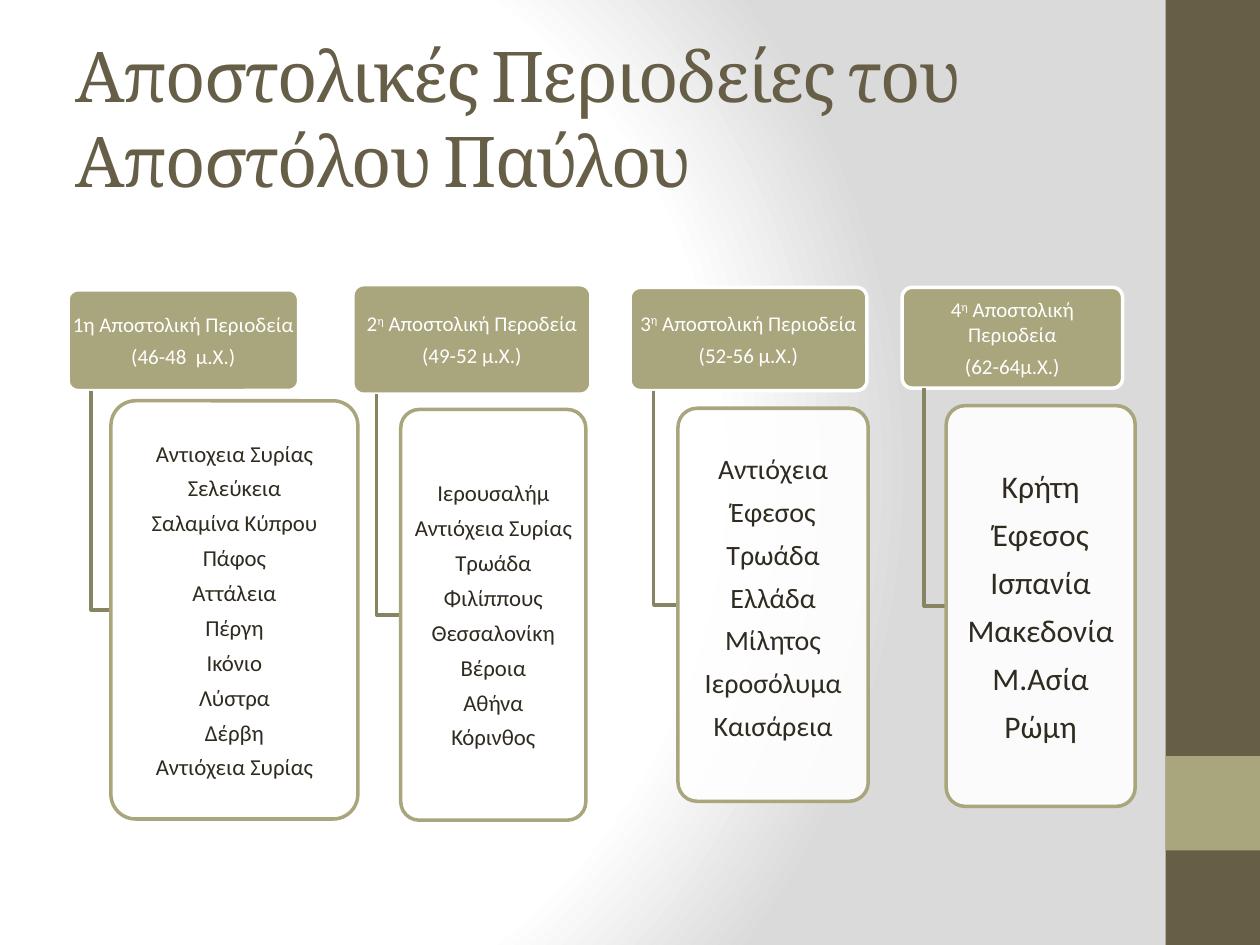
import pptx
import pptx.util
import pptx.dml.color
import pptx.enum.shapes
import pptx.enum.text
import pptx.oxml
from dataclasses import dataclass

Pt = pptx.util.Pt
NS = 'xmlns:a="http://schemas.openxmlformats.org/drawingml/2006/main"'


@dataclass(frozen=True)
class Theme:
    dark: str = "675E47"
    sage: str = "A9A57C"
    rule: str = "878463"
    ink: str = "2F2B20"
    white: str = "FFFFFF"
    shade: str = "DADADA"
    serif: str = "Cambria"
    sans: str = "Calibri"
    title: float = 40
    lead: float = 48.6
    head: float = 12
    gap: float = 0.33
    line: float = 2


def tint(name):
    return pptx.dml.color.RGBColor.from_string(name)


class Deck:
    def __init__(self, theme):
        self.theme = theme
        self.file = pptx.Presentation()
        self.file.slide_width, self.file.slide_height = Pt(720), Pt(540)
        self.slide = self.file.slides.add_slide(self.file.slide_layouts[5])

    def ground(self):
        t = self.theme
        self.slide.background.fill.gradient()
        old = self.slide.element.xpath(".//a:gradFill")[0]
        stops = "".join(
            f'<a:gs pos="{pos}"><a:srgbClr val="{tone}"/></a:gs>'
            for pos, tone in ((0, t.white), (75000, t.white), (100000, t.shade)))
        new = pptx.oxml.parse_xml(
            f'<a:gradFill {NS} rotWithShape="1"><a:gsLst>{stops}</a:gsLst>'
            '<a:path path="circle"><a:fillToRect l="20000" t="50000" '
            'r="100000" b="50000"/></a:path></a:gradFill>')
        old.getparent().replace(old, new)

    def say(self, para, text, font, size, tone, base=0):
        run = para.add_run()
        run.text = text
        run.font.name, run.font.size = font, Pt(size)
        run.font.color.rgb = tint(tone)
        if base:
            run.font._element.set("baseline", str(base * 1000))
        return run

    def title(self, text):
        t = self.theme
        box = self.slide.shapes.title
        box.left, box.top, box.width, box.height = Pt(36), Pt(21.6), Pt(600), Pt(90)
        frame = box.text_frame
        frame.auto_size = pptx.enum.text.MSO_AUTO_SIZE.NONE
        frame.vertical_anchor = pptx.enum.text.MSO_ANCHOR.MIDDLE
        para = frame.paragraphs[0]
        para.alignment = pptx.enum.text.PP_ALIGN.LEFT
        para.line_spacing = Pt(t.lead)
        run = self.say(para, text, t.serif, t.title, t.dark)
        run.font._element.set("spc", "-100")

    def box(self, area, fill, line=None, kind="RECTANGLE"):
        form = getattr(pptx.enum.shapes.MSO_SHAPE, kind)
        shape = self.slide.shapes.add_shape(form, *map(Pt, area))
        shape.shadow.inherit = False
        shape.fill.solid()
        shape.fill.fore_color.rgb = tint(fill)
        if line:
            shape.line.color.rgb = tint(line)
            shape.line.width = Pt(self.theme.line)
        else:
            shape.line.fill.background()
        return shape

    def card(self, area, fill, line, rows, size, tone, lift=0):
        shape = self.box(area, fill, line, "ROUNDED_RECTANGLE")
        shape.adjustments[0] = 0.1
        frame = shape.text_frame
        frame.word_wrap = True
        frame.vertical_anchor = pptx.enum.text.MSO_ANCHOR.MIDDLE
        frame.margin_left = frame.margin_right = frame.margin_top = 0
        frame.margin_bottom = Pt(lift)
        for i, row in enumerate(rows):
            para = frame.add_paragraph() if i else frame.paragraphs[0]
            para.alignment = pptx.enum.text.PP_ALIGN.CENTER
            para.space_after = Pt(round(size * self.theme.gap, 1))
            for text, base in row:
                self.say(para, text, self.theme.sans, size, tone, base)
        return shape

    def elbow(self, head, body):
        x, y = Pt(head[0] + head[2] / 10), Pt(head[1] + head[3])
        end, mid = Pt(body[0]), Pt(body[1] + body[3] / 2)
        pen = self.slide.shapes.build_freeform(x, y)
        pen.add_line_segments([(x, mid), (end, mid)], close=False)
        shape = pen.convert_to_shape()
        shape.shadow.inherit = False
        shape.fill.background()
        shape.line.color.rgb = tint(self.theme.rule)
        shape.line.width = Pt(self.theme.line)

    def trip(self, head, body, name, years, stops, size, lift=0):
        t = self.theme
        self.card(head, t.sage, t.white, [name, [(years, 0)]], t.head, t.white)
        self.elbow(head, body)
        rows = [[(stop, 0)] for stop in stops]
        shape = self.card(body, t.white, t.sage, rows, size, t.ink, lift)
        tone = shape.element.xpath("./p:spPr/a:solidFill/a:srgbClr")[0]
        tone.append(pptx.oxml.parse_xml(f'<a:alpha {NS} val="90000"/>'))


TRIPS = [
    ((38.9, 165.6, 131.8, 57.6), (63.4, 229, 141.1, 239),
     [("1η Αποστολική Περιοδεία", 0)], "(46-48  μ.Χ.)",
     ["Αντιοχεια Συρίας", "Σελεύκεια", "Σαλαμίνα Κύπρου", "Πάφος", "Αττάλεια",
      "Πέργη", "Ικόνιο", "Λύστρα", "Δέρβη", "Αντιόχεια Συρίας"], 13),
    ((201.6, 162.7, 136.1, 62.6), (229, 234, 105.8, 234.7),
     [("2", 0), ("η", 30), (" Αποστολική Περοδεία", 0)], "(49-52 μ.Χ.)",
     ["Ιερουσαλήμ", "Αντιόχεια Συρίας", "Τρωάδα", "Φιλίππους",
      "Θεσσαλονίκη", "Βέροια", "Αθήνα", "Κόρινθος"], 13),
    ((360, 164.2, 135.4, 59), (387.4, 233.3, 108.7, 224.6),
     [("3", 0), ("η", 30), (" Αποστολική Περιοδεία", 0)], "(52-56 μ.Χ.)",
     ["Αντιόχεια", "Έφεσος", "Τρωάδα", "Ελλάδα", "Μίλητος",
      "Ιεροσόλυμα", "Καισάρεια"], 16, 9),
    ((515.5, 164.2, 126, 57.6), (540.7, 231.8, 108, 229),
     [("4", 0), ("η", 30), (" Αποστολική Περιοδεία", 0)], "(62-64μ.Χ.)",
     ["Κρήτη", "Έφεσος", "Ισπανία", "Μακεδονία", "Μ.Ασία", "Ρώμη"], 18),
]


def main():
    theme = Theme()
    deck = Deck(theme)
    deck.ground()
    deck.box((666, 0, 54, 540), theme.dark)
    deck.box((666, 432, 54, 54), theme.sage)
    deck.title("Αποστολικές Περιοδείες του Αποστόλου Παύλου")
    for trip in TRIPS:
        deck.trip(*trip)
    deck.file.save("out.pptx")


if __name__ == "__main__":
    main()
